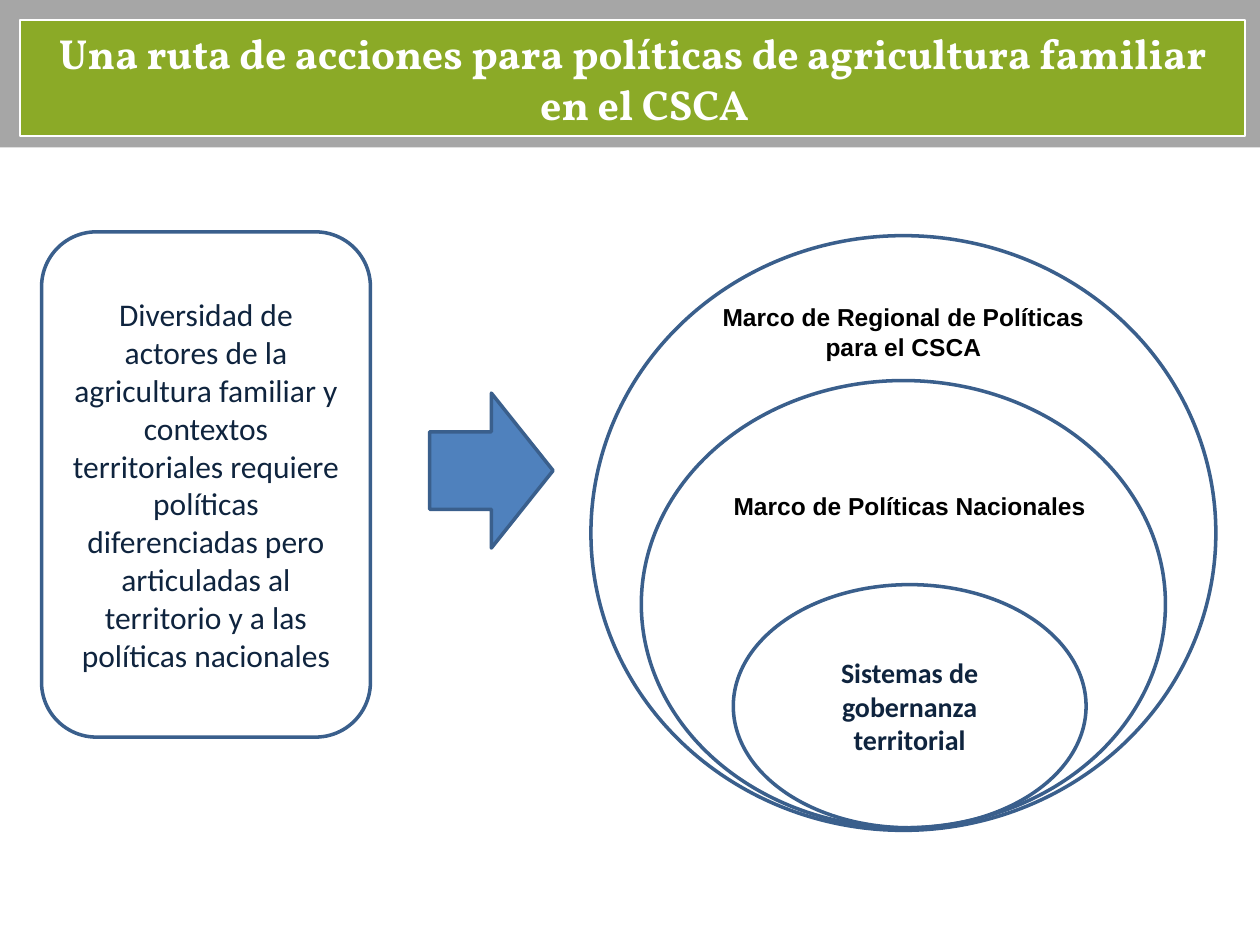
from dataclasses import dataclass

from lxml.etree import _Element
from pptx import Presentation
from pptx.dml.color import RGBColor
from pptx.enum.shapes import MSO_SHAPE
from pptx.enum.text import MSO_ANCHOR, MSO_AUTO_SIZE, PP_ALIGN
from pptx.util import Inches, Pt

WHITE, BLACK, GREY, GREEN = "FFFFFF", "000000", "A6A6A6", "8BAA27"
OUTLINE, BLUE, NAVY = "3A5F8C", "4F81BD", "0F243E"


@dataclass
class Label:
    text: str
    size: float
    font: str
    color: str
    bold: bool = True


@dataclass
class Figure:
    kind: MSO_SHAPE
    box: tuple[float, float, float, float]
    fill: str | None = None
    line: str | None = OUTLINE
    label: Label | None = None


@dataclass
class Caption:
    box: tuple[float, float, float, float]
    label: Label


def rgb(color: str) -> RGBColor:
    return RGBColor.from_string(color)


def paint(sp, fill: str | None, line: str | None, width: float = 2) -> None:
    if fill:
        sp.fill.solid()
        sp.fill.fore_color.rgb = rgb(fill)
    else:
        sp.fill.background()
    if line:
        sp.line.color.rgb = rgb(line)
        sp.line.width = Pt(width)
    else:
        sp.line.fill.background()


def write(tf, label: Label, anchor: MSO_ANCHOR = MSO_ANCHOR.MIDDLE):
    """Put one centred paragraph in the frame and return it."""
    tf.word_wrap = True
    tf.vertical_anchor = anchor
    p = tf.paragraphs[0]
    p.alignment = PP_ALIGN.CENTER
    r = p.add_run()
    r.text = label.text
    r.font.size = Pt(label.size)
    r.font.name = label.font
    r.font.bold = label.bold
    r.font.color.rgb = rgb(label.color)
    return p


def add_figure(s, figure: Figure):
    sp = s.shapes.add_shape(figure.kind, *map(Inches, figure.box))
    sp.shadow.inherit = False
    paint(sp, figure.fill, figure.line)
    if figure.label:
        write(sp.text_frame, figure.label)
    return sp


def add_caption(s, caption: Caption) -> None:
    sp = s.shapes.add_textbox(*map(Inches, caption.box))
    write(sp.text_frame, caption.label, MSO_ANCHOR.TOP)
    sp.text_frame.auto_size = MSO_AUTO_SIZE.SHAPE_TO_FIT_TEXT


def add_title(s, label: Label) -> None:
    """Format the title over a grey band across the top."""
    title = s.shapes.title
    title.left, title.top, title.width, title.height = map(Inches, (0.16, 0.16, 9.72, 0.92))
    paint(title, GREEN, WHITE, 1.5)
    p = write(title.text_frame, label)
    title.text_frame.auto_size = MSO_AUTO_SIZE.NONE
    p.space_after = Pt(6)
    props: _Element = p._p.get_or_add_pPr()
    props.set("marL", str(Inches(0.19)))
    props.set("indent", str(-Inches(0.19)))
    band = add_figure(s, Figure(MSO_SHAPE.RECTANGLE, (0, 0, 10, 1.17), GREY, None))
    title.element.addprevious(band.element)


TITLE = Label("Una ruta de acciones para políticas de agricultura familiar en el CSCA",
              24, "Vollkorn", WHITE)
ACTORS = Label("Diversidad de actores de la agricultura familiar y contextos territoriales "
               "requiere políticas diferenciadas pero articuladas al territorio y a las "
               "políticas nacionales", 18, "Calibri", NAVY, bold=False)
GOVERNANCE = Label("Sistemas de gobernanza territorial", 16, "Calibri", NAVY)
NATIONAL = Label("Marco de Políticas Nacionales", 14, "Arial", BLACK)
REGIONAL = Label("Marco de Regional de Políticas para el CSCA", 14, "Arial", BLACK)

FIGURES = [
    Figure(MSO_SHAPE.ROUNDED_RECTANGLE, (0.33, 1.84, 2.61, 4.01), label=ACTORS),
    Figure(MSO_SHAPE.RIGHT_ARROW, (3.41, 3.12, 0.98, 1.23), BLUE),
    Figure(MSO_SHAPE.OVAL, (5.82, 4.64, 2.8, 1.93), label=GOVERNANCE),
    Figure(MSO_SHAPE.OVAL, (5.09, 3.02, 4.16, 3.55)),
    Figure(MSO_SHAPE.OVAL, (4.69, 1.87, 4.96, 4.72)),
]
CAPTIONS = [
    Caption((5.67, 3.85, 3.1, 0.34), NATIONAL),
    Caption((5.57, 2.35, 3.2, 0.57), REGIONAL),
]


def main() -> None:
    prs = Presentation()
    prs.slide_width, prs.slide_height = Inches(10), Inches(7.5)
    s = prs.slides.add_slide(prs.slide_layouts[5])
    add_title(s, TITLE)
    for figure in FIGURES:
        add_figure(s, figure)
    for caption in CAPTIONS:
        add_caption(s, caption)
    prs.save("out.pptx")


if __name__ == "__main__":
    main()
